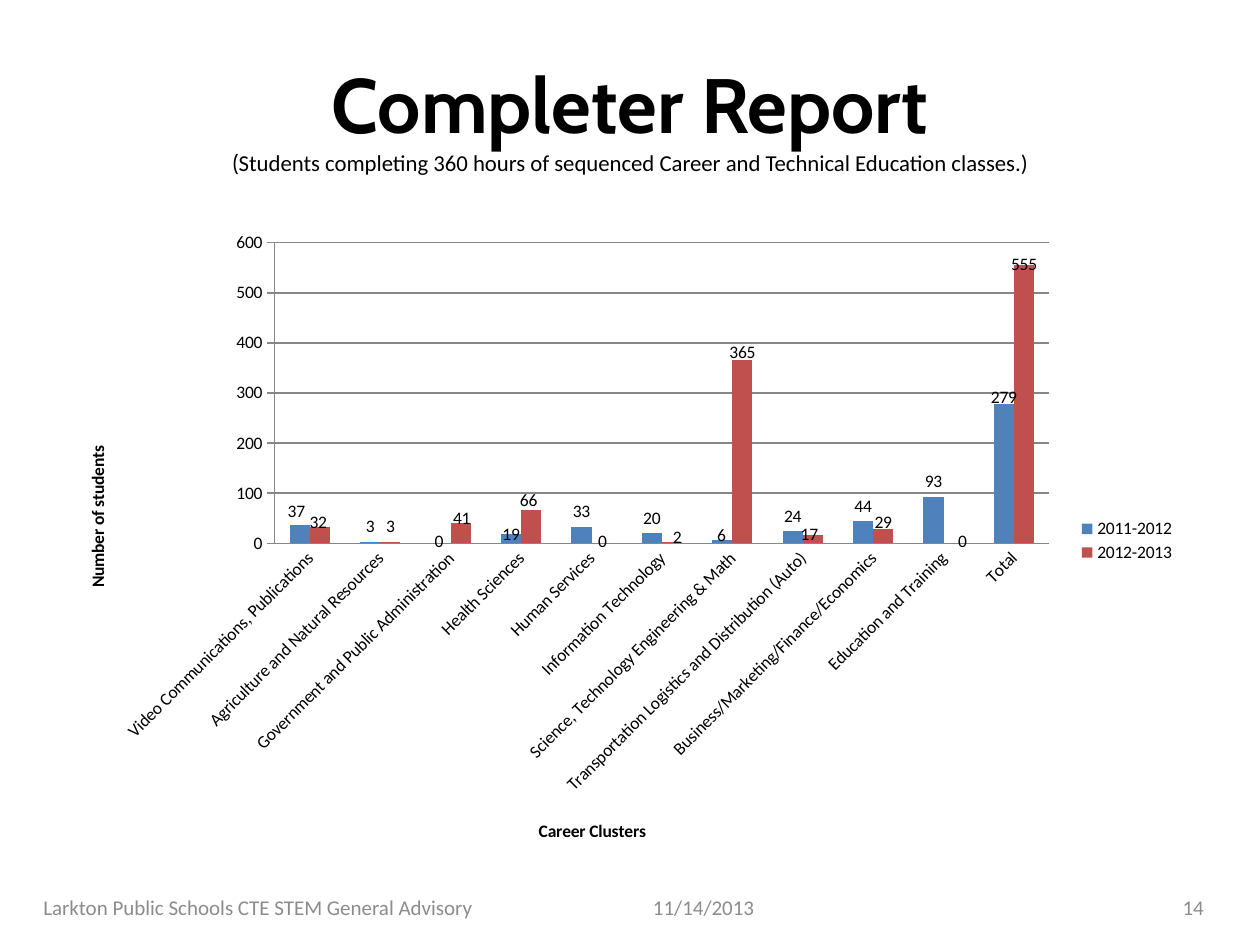
from lxml import etree
from pptx import Presentation
from pptx.chart.data import CategoryChartData
from pptx.dml.color import RGBColor
from pptx.enum import chart as ch, text
from pptx.oxml.ns import qn
from pptx.util import Pt

BLACK = RGBColor(0, 0, 0)
GRAY = RGBColor(0x8C, 0x8C, 0x8C)
AXIS_GRAY = RGBColor(0x87, 0x87, 0x87)
BLUE = RGBColor(0x4F, 0x81, 0xBD)
RED = RGBColor(0xC0, 0x50, 0x4D)
CHART_WIDTH, CHART_HEIGHT = 648, 366

CLUSTERS = [  # name, 2011-2012, 2012-2013
    ("Video Communications, Publications", 37, 32),
    ("Agriculture and Natural Resources", 3, 3),
    ("Government and Public Administration", 0, 41),
    ("Health Sciences", 19, 66),
    ("Human Services", 33, 0),
    ("Information Technology", 20, 2),
    ("Science, Technology Engineering & Math", 6, 365),
    ("Transportation Logistics and Distribution (Auto)", 24, 17),
    ("Business/Marketing/Finance/Economics", 44, 29),
    ("Education and Training", 93, 0),
    ("Total", 279, 555),
]
# Label shifts in points: point index -> (right, down)
BLUE_SHIFTS = {0: (-2, 1), 2: (-1, 7.5), 3: (0, 9), 6: (-0.5, 6), 10: (0, 5)}
RED_SHIFTS = {0: (-1, 6), 2: (0.5, 6), 3: (-1.5, 3), 4: (0.5, 7.5), 5: (3, 6),
              6: (0, 4), 7: (-2, 8.5), 8: (0, 5), 9: (5, 7.5), 10: (0, 8)}


def make_layout(**settings):
    """Return a manual chart layout."""
    layout = etree.Element(qn("c:layout"))
    manual = etree.SubElement(layout, qn("c:manualLayout"))
    for name, value in settings.items():
        etree.SubElement(manual, qn("c:" + name)).set("val", str(value))
    return layout


def add_text(page, left, top, width, height, words, size, font, color, align):
    """Add a middle-anchored text box and return its paragraph."""
    box = page.shapes.add_textbox(Pt(left), Pt(top), Pt(width), Pt(height))
    box.text_frame.word_wrap = True
    box.text_frame.vertical_anchor = text.MSO_ANCHOR.MIDDLE
    para = box.text_frame.paragraphs[0]
    para.alignment = align
    para.font.size, para.font.name = Pt(size), font
    para.font.color.rgb = color
    para.add_run().text = words
    return para


deck = Presentation()
deck.slide_width, deck.slide_height = Pt(720), Pt(540)
page = deck.slides.add_slide(deck.slide_layouts[6])

# Chart
data = CategoryChartData()
data.categories = [row[0] for row in CLUSTERS]
data.add_series("2011-2012", [row[1] for row in CLUSTERS])
data.add_series("2012-2013", [row[2] for row in CLUSTERS])
chart = page.shapes.add_chart(
    ch.XL_CHART_TYPE.COLUMN_CLUSTERED, Pt(30), Pt(126),
    Pt(CHART_WIDTH), Pt(CHART_HEIGHT), data).chart
chart.has_title = False
chart.font.size, chart.font.name = Pt(10), "Calibri"
chart.font.color.rgb = BLACK
plot = chart.plots[0]
plot.gap_width, plot.overlap = 150, 0
plot.vary_by_categories = False
plot_area = chart._chartSpace.chart.plotArea
for old in plot_area.findall(qn("c:layout")):
    plot_area.remove(old)
plot_area.insert(0, make_layout(layoutTarget="inner", xMode="edge", yMode="edge",
                                x=0.196, y=0.035, w=0.683, h=0.469))

# Series and their labels
for series, color, shifts in zip(plot.series, (BLUE, RED), (BLUE_SHIFTS, RED_SHIFTS)):
    series.format.fill.solid()
    series.format.fill.fore_color.rgb = color
    series.invert_if_negative = False
    labels = series.data_labels
    labels.show_value = True
    labels.position = ch.XL_LABEL_POSITION.OUTSIDE_END
    for index in shifts:
        series.points[index].data_label.position = ch.XL_LABEL_POSITION.OUTSIDE_END
    for label in series._element.iter(qn("c:dLbl")):
        mark = label.find(qn("c:idx"))
        right, down = shifts[int(mark.get("val"))]
        mark.addnext(make_layout(x=round(right / CHART_WIDTH, 4),
                                 y=round(down / CHART_HEIGHT, 4)))

# Axes
for axis, words, left, top in (
        (chart.category_axis, "Career Clusters", 0.426, 0.93),
        (chart.value_axis, "Number of students", 0.027, 0.347)):
    axis.format.line.color.rgb = AXIS_GRAY
    axis.format.line.width = Pt(0.75)
    title = axis.axis_title
    title.text_frame.text = words
    font = title.text_frame.paragraphs[0].font
    font.size, font.bold, font.name = Pt(10), True, "Calibri"
    font.color.rgb = BLACK
    for old in title._element.findall(qn("c:layout")):
        title._element.remove(old)
    title._element.find(qn("c:tx")).addnext(
        make_layout(xMode="edge", yMode="edge", x=left, y=top))
chart.category_axis.major_tick_mark = ch.XL_TICK_MARK.NONE
chart.category_axis.tick_labels.font.size = Pt(10)
chart.category_axis._element.find(qn("c:txPr")).find(qn("a:bodyPr")).set("rot", "-2700000")
value_axis = chart.value_axis
value_axis.minimum_scale, value_axis.maximum_scale = 0, 600
value_axis.major_unit = 100
value_axis.major_tick_mark = ch.XL_TICK_MARK.OUTSIDE
value_axis.major_gridlines.format.line.color.rgb = AXIS_GRAY
value_axis.major_gridlines.format.line.width = Pt(0.75)

# Legend
chart.has_legend = True
legend = chart.legend
legend.position = ch.XL_LEGEND_POSITION.RIGHT
legend.include_in_layout = False
for old in legend._element.findall(qn("c:layout")):
    legend._element.remove(old)
legend._element.find(qn("c:legendPos")).addnext(
    make_layout(xMode="edge", yMode="edge", x=0.9, y=0.46, w=0.095, h=0.08))

# Title and subtitle
heading = add_text(page, 36, 21.6, 648, 90, "Completer Report", 44, "Cabin",
                   BLACK, text.PP_ALIGN.CENTER)
heading.runs[0].font.bold = True
heading.add_line_break()
for words, font_name in (
        ("(", "Cabin"),
        ("Students completing 360 hours of sequenced Career and Technical "
         "Education classes.)", "Calibri")):
    span = heading.add_run()
    span.text = words
    span.font.size, span.font.name = Pt(13), font_name

# Footer
for left, width, words, align in (
        (2, 291, "Larkton Public Schools CTE STEM General Advisory", text.PP_ALIGN.CENTER),
        (366, 168, "11/14/2013", text.PP_ALIGN.LEFT),
        (666, 29, "14", text.PP_ALIGN.RIGHT)):
    add_text(page, left, 504, width, 28.8, words, 12, "Calibri", GRAY, align)

deck.save("out.pptx")
